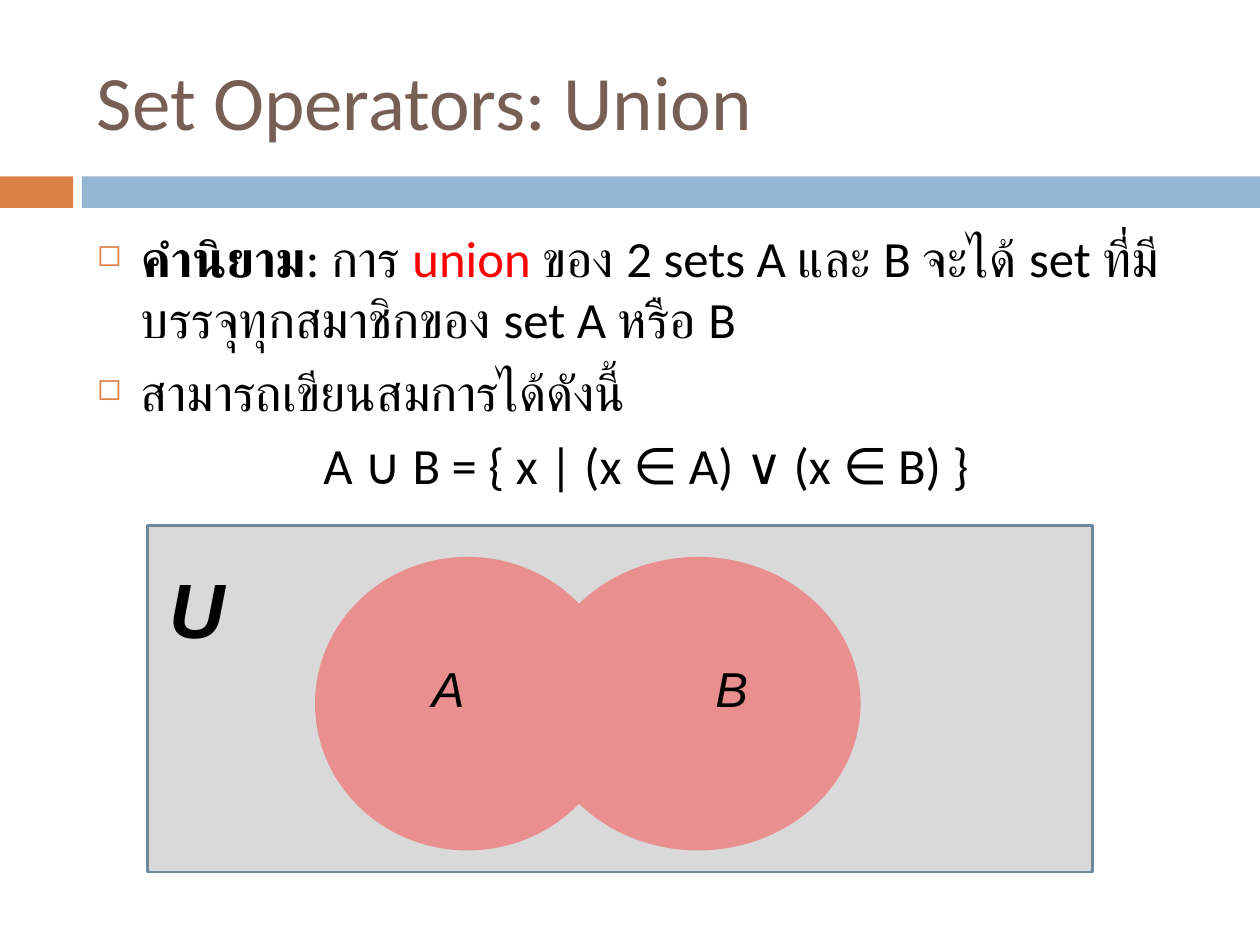
from dataclasses import dataclass

from lxml.etree import SubElement
from pptx import Presentation
from pptx.dml.color import RGBColor
from pptx.enum.shapes import MSO_SHAPE as Preset
from pptx.enum.text import MSO_ANCHOR as Anchor, PP_ALIGN as Align
from pptx.oxml.ns import qn
from pptx.util import Inches, Pt


@dataclass(frozen=True)
class Theme:
    """Colours, fonts and type sizes of the slide."""
    orange: str = "DD8047"
    blue: str = "94B6D2"
    brown: str = "775F55"
    black: str = "000000"
    red: str = "FF0000"
    grey: str = "D9D9D9"
    outline: str = "6D879B"
    pink: str = "E98F8F"
    text_font: str = "Calibri"
    label_font: str = "Arial"
    title_size: int = 44
    body_size: int = 29
    label_size: int = 28


THEME = Theme()


def add_block(slide, preset, box, fill, line=None):
    """Add a flat preset shape, outlined when a line colour is given."""
    block = slide.shapes.add_shape(preset, *map(Inches, box))
    block.shadow.inherit = False
    block.fill.solid()
    block.fill.fore_color.rgb = RGBColor.from_string(fill)
    if line:
        block.line.color.rgb = RGBColor.from_string(line)
        block.line.width = Pt(1.5)
    else:
        block.line.fill.background()


def add_frame(slide, box, wrap=True, anchor=Anchor.TOP):
    """Add a text box and return its text frame."""
    frame = slide.shapes.add_textbox(*map(Inches, box)).text_frame
    frame.word_wrap = wrap
    frame.vertical_anchor = anchor
    return frame


def write(paragraph, text, *, size, color=THEME.black, font=THEME.text_font,
          bold=False, italic=False):
    """Append one formatted run to a paragraph."""
    run = paragraph.add_run()
    run.text = text
    run.font.name = font
    run.font.size = Pt(size)
    run.font.bold = bold
    run.font.italic = italic
    run.font.color.rgb = RGBColor.from_string(color)


def format_body(paragraph, bullet):
    """Set the hanging indent and spacing, with a square bullet if wanted."""
    paragraph.space_before = Pt(7)
    properties = paragraph._p.get_or_add_pPr()
    properties.set("marL", str(Inches(0.35)))
    properties.set("indent", str(Inches(-0.35)))
    if bullet:
        color = SubElement(properties, qn("a:buClr"))
        SubElement(color, qn("a:srgbClr"), val=THEME.orange)
        SubElement(properties, qn("a:buSzPct"), val="60000")
        SubElement(properties, qn("a:buChar"), char="◻")
    else:
        SubElement(properties, qn("a:buNone"))


def add_header(slide):
    """Add the two-colour band and the title above it."""
    add_block(slide, Preset.RECTANGLE, (0, 1.4, 0.58, 0.25), THEME.orange)
    add_block(slide, Preset.RECTANGLE, (0.65, 1.4, 9.35, 0.25), THEME.blue)
    title = add_frame(slide, (0.67, 0.25, 8.92, 1.08), anchor=Anchor.MIDDLE)
    write(title.paragraphs[0], "Set Operators: Union",
          size=THEME.title_size, color=THEME.brown)


def add_definition(slide):
    """Add the definition of a union and its equation."""
    body = add_frame(slide, (0.67, 1.75, 8.92, 4.92))
    definition = body.paragraphs[0]
    lead_in = body.add_paragraph()
    equation = body.add_paragraph()
    for paragraph in (definition, lead_in, equation):
        format_body(paragraph, bullet=paragraph is not equation)
    equation.alignment = Align.CENTER

    size = THEME.body_size
    write(definition, "คำนิยาม", size=size, bold=True)
    write(definition, ": การ ", size=size)
    write(definition, "union ", size=size, color=THEME.red)
    write(definition, "ของ 2 sets A และ B จะได้ set ที่มีบรรจุทุกสมาชิกของ set A หรือ B",
          size=size)
    write(lead_in, "สามารถเขียนสมการได้ดังนี้", size=size)
    write(equation, "A ∪ B = { x | (x ∈ A) ∨ (x ∈ B) }", size=size)


def add_label(slide, name, box, size, bold=False):
    """Add the italic name of a set."""
    label = add_frame(slide, box, wrap=False)
    write(label.paragraphs[0], name, size=size, font=THEME.label_font,
          bold=bold, italic=True)


def add_venn(slide):
    """Add the universe with the union of sets A and B."""
    add_block(slide, Preset.RECTANGLE, (1.17, 4.17, 7.5, 2.75),
              THEME.grey, THEME.outline)
    add_label(slide, "U", (1.25, 4.41, 0.58, 0.84), THEME.title_size, bold=True)
    for left, width in ((2.5, 2.42), (4.25, 2.58)):
        add_block(slide, Preset.OVAL, (left, 4.42, width, 2.33), THEME.pink)
    for name, left in (("A", 3.33), ("B", 5.58)):
        add_label(slide, name, (left, 5.18, 0.42, 0.57), THEME.label_size)


def main():
    """Build and save the slide."""
    deck = Presentation()
    deck.slide_width, deck.slide_height = Inches(10), Inches(7.5)
    slide = deck.slides.add_slide(deck.slide_layouts[6])
    add_header(slide)
    add_definition(slide)
    add_venn(slide)
    deck.save("out.pptx")


if __name__ == "__main__":
    main()
